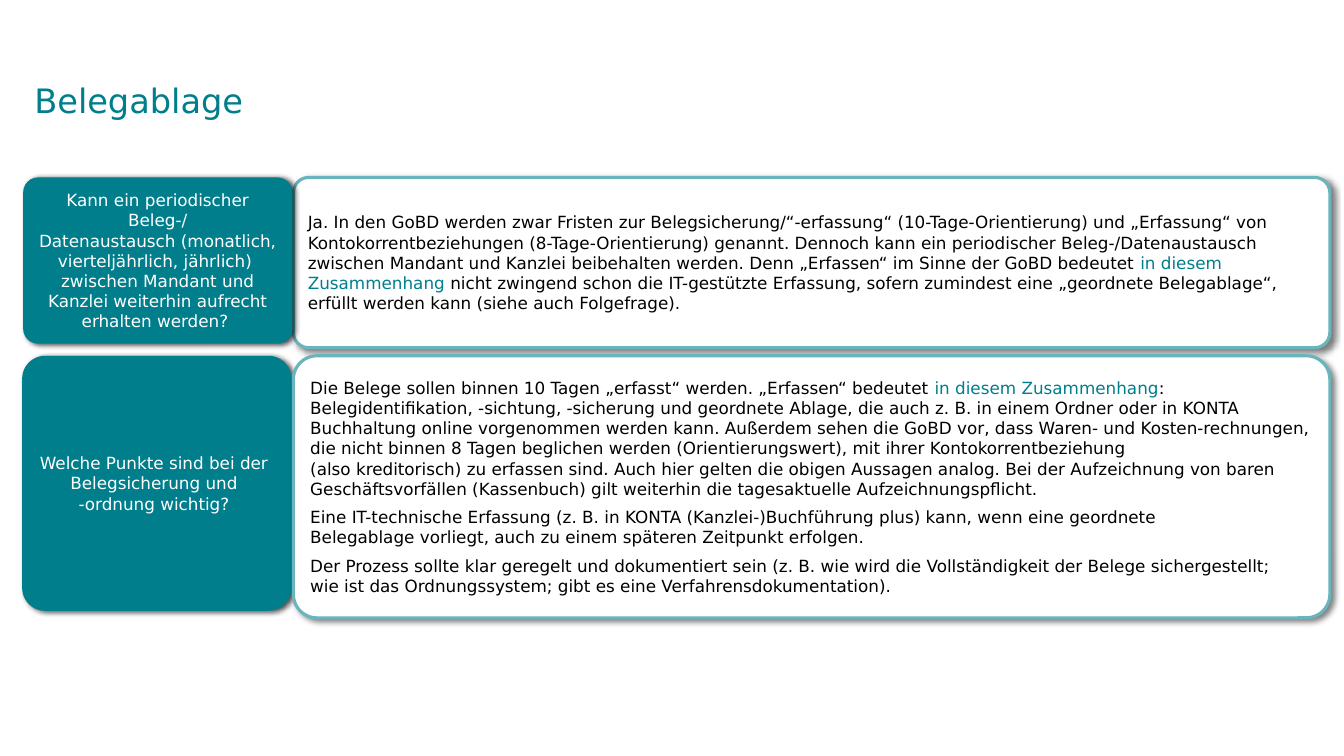
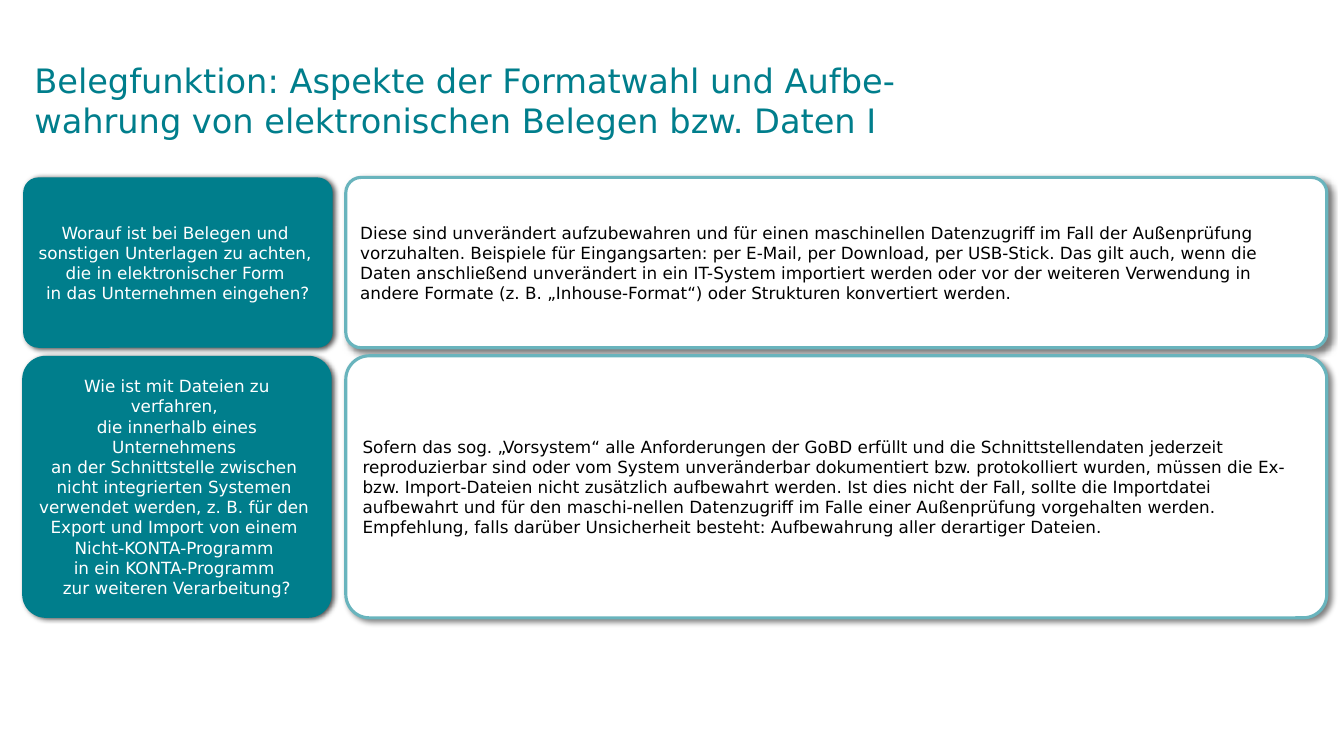
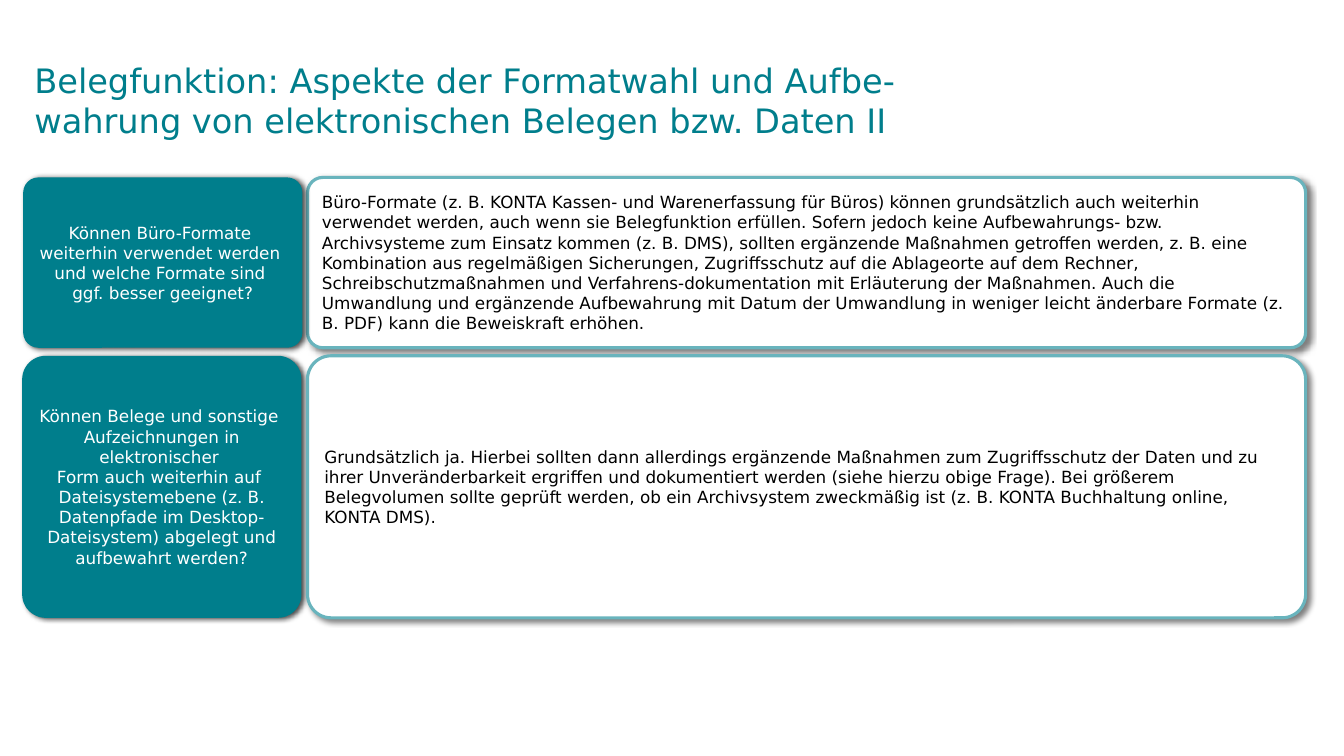
import copy

import pptx
import pptx.dml.color
import pptx.enum.shapes
import pptx.enum.text
import pptx.oxml
import pptx.oxml.ns
import pptx.util

FONT = "DejaVu Sans"
TEAL, PALE_TEAL, WHITE, BLACK = "007E8C", "69B4BD", "FFFFFF", "000000"
ALIGN = pptx.enum.text.PP_ALIGN
TITLE_BOX = (0.34, 0.49, 9.58, 1.01)

# Question left, top, height, and whether the answer lies behind the question
ROWS = [
    (0.23, 1.76, 1.69, True),
    (0.22, 3.53, 2.6, False),
]

# Look of each kind of card; shadow is opacity %, blur pt, distance pt, angle
QUESTION = {"fill": TEAL, "line": None, "color": WHITE, "shadow": (70, 4, 2, 20),
            "para": {"alignment": ALIGN.CENTER}}
ANSWER = {"fill": WHITE, "line": PALE_TEAL, "color": BLACK, "shadow": (50, 4, 3, 40),
          "para": {"alignment": ALIGN.LEFT, "space_before": pptx.util.Pt(6)}}

# Text between asterisks is highlighted; each list item is a paragraph
SLIDES = [
    {
        "title": "Belegablage",
        "question_width": 2.67, "answer_left": 2.91, "answer_width": 10.28,
        "question_trim": (0.04, 0.07),
        "cards": [
            (["Kann ein periodischer Beleg-/",
              "Datenaustausch (monatlich, vierteljährlich, jährlich) ",
              "zwischen Mandant und Kanzlei weiterhin aufrecht erhalten werden? "],
             ["Ja. In den GoBD werden zwar Fristen zur Belegsicherung/“-erfassung“ "
              "(10-Tage-Orientierung) und „Erfassung“ von Kontokorrentbeziehungen "
              "(8-Tage-Orientierung) genannt. Dennoch kann ein periodischer "
              "Beleg-/Datenaustausch zwischen Mandant und Kanzlei beibehalten werden. "
              "Denn „Erfassen“ im Sinne der GoBD bedeutet *in diesem Zusammenhang* nicht "
              "zwingend schon die IT-gestützte Erfassung, sofern zumindest eine "
              "„geordnete Belegablage“, erfüllt werden kann (siehe auch Folgefrage)."]),
            (["Welche Punkte sind bei der ",
              "Belegsicherung und \n-ordnung wichtig? "],
             ["Die Belege sollen binnen 10 Tagen „erfasst“ werden. „Erfassen“ bedeutet "
              "*in diesem Zusammenhang*: Belegidentifikation, -sichtung, -sicherung und "
              "geordnete Ablage, die auch z. B. in einem Ordner oder in KONTA "
              "Buchhaltung online vorgenommen werden kann. Außerdem sehen die GoBD vor, "
              "dass Waren- und Kosten-rechnungen, die nicht binnen 8 Tagen beglichen "
              "werden (Orientierungswert), mit ihrer Kontokorrentbeziehung \n"
              "(also kreditorisch) zu erfassen sind. Auch hier gelten die obigen "
              "Aussagen analog. Bei der Aufzeichnung von baren Geschäftsvorfällen "
              "(Kassenbuch) gilt weiterhin die tagesaktuelle Aufzeichnungspflicht.",
              "Eine IT-technische Erfassung (z. B. in KONTA (Kanzlei-)Buchführung plus) "
              "kann, wenn eine geordnete \nBelegablage vorliegt, auch zu einem späteren "
              "Zeitpunkt erfolgen.",
              "Der Prozess sollte klar geregelt und dokumentiert sein (z. B. wie wird "
              "die Vollständigkeit der Belege sichergestellt; \nwie ist das "
              "Ordnungssystem; gibt es eine Verfahrensdokumentation)."]),
        ],
    },
    {
        "title": "Belegfunktion: Aspekte der Formatwahl und Aufbe-wahrung von "
                 "elektronischen Belegen bzw. Daten I",
        "question_width": 3.07, "answer_left": 3.43, "answer_width": 9.73,
        "question_trim": (0, 0),
        "cards": [
            (["Worauf ist bei Belegen und ",
              "sonstigen Unterlagen zu achten, ",
              "die in elektronischer Form ",
              "in das Unternehmen eingehen?"],
             ["Diese sind unverändert aufzubewahren und für einen maschinellen "
              "Datenzugriff im Fall der Außenprüfung vorzuhalten. Beispiele für "
              "Eingangsarten: per E-Mail, per Download, per USB-Stick. Das gilt auch, "
              "wenn die Daten anschließend unverändert in ein IT-System importiert "
              "werden oder vor der weiteren Verwendung in andere Formate (z. B. "
              "„Inhouse-Format“) oder Strukturen konvertiert werden."]),
            (["Wie ist mit Dateien zu verfahren, ",
              "die innerhalb eines Unternehmens ",
              "an der Schnittstelle zwischen ",
              "nicht integrierten Systemen ",
              "verwendet werden, z. B. für den ",
              "Export und Import von einem ",
              "Nicht-KONTA-Programm ",
              "in ein KONTA-Programm ",
              "zur weiteren Verarbeitung?"],
             ["Sofern das sog. „Vorsystem“ alle Anforderungen der GoBD erfüllt und die "
              "Schnittstellendaten jederzeit reproduzierbar sind oder vom System "
              "unveränderbar dokumentiert bzw. protokolliert wurden, müssen die Ex- bzw. "
              "Import-Dateien nicht zusätzlich aufbewahrt werden. Ist dies nicht der "
              "Fall, sollte die Importdatei aufbewahrt und für den maschi-nellen "
              "Datenzugriff im Falle einer Außenprüfung vorgehalten werden. Empfehlung, "
              "falls darüber Unsicherheit besteht: Aufbewahrung aller derartiger "
              "Dateien."]),
        ],
    },
    {
        "title": "Belegfunktion: Aspekte der Formatwahl und Aufbe-wahrung von "
                 "elektronischen Belegen bzw. Daten II",
        "question_width": 2.77, "answer_left": 3.05, "answer_width": 9.9,
        "question_trim": (0, 0),
        "cards": [
            (["Können Büro-Formate ",
              "weiterhin verwendet werden ",
              "und welche Formate sind ",
              "ggf. besser geeignet?"],
             ["Büro-Formate (z. B. KONTA Kassen- und Warenerfassung für Büros) können "
              "grundsätzlich auch weiterhin verwendet werden, auch wenn sie "
              "Belegfunktion erfüllen. Sofern jedoch keine Aufbewahrungs- bzw. "
              "Archivsysteme zum Einsatz kommen (z. B. DMS), sollten ergänzende "
              "Maßnahmen getroffen werden, z. B. eine Kombination aus regelmäßigen "
              "Sicherungen, Zugriffsschutz auf die Ablageorte auf dem Rechner, "
              "Schreibschutzmaßnahmen und Verfahrens-dokumentation mit Erläuterung der "
              "Maßnahmen. Auch die Umwandlung und ergänzende Aufbewahrung mit Datum der "
              "Umwandlung in weniger leicht änderbare Formate (z. B. PDF) kann die "
              "Beweiskraft erhöhen."]),
            (["Können Belege und sonstige ",
              "Aufzeichnungen in elektronischer ",
              "Form auch weiterhin auf ",
              "Dateisystemebene (z. B. Datenpfade im Desktop-Dateisystem) abgelegt und "
              "aufbewahrt werden?"],
             ["Grundsätzlich ja. Hierbei sollten dann allerdings ergänzende Maßnahmen "
              "zum Zugriffsschutz der Daten und zu ihrer Unveränderbarkeit ergriffen "
              "und dokumentiert werden (siehe hierzu obige Frage). Bei größerem "
              "Belegvolumen sollte geprüft werden, ob ein Archivsystem zweckmäßig ist "
              "(z. B. KONTA Buchhaltung online, KONTA DMS)."]),
        ],
    },
]


def rgb(value):
    return pptx.dml.color.RGBColor.from_string(value)


def inches(box):
    return [pptx.util.Inches(v) for v in box]


def add_run(p, text, size, color):
    r = p.add_run()
    r.text = text
    for name, value in {"name": FONT, "size": pptx.util.Pt(size)}.items():
        setattr(r.font, name, value)
    r.font.color.rgb = rgb(color)
    return r


def add_text(p, text, size, color):
    """Write text with *highlights* and line breaks set in the size of the text."""
    for i, part in enumerate(text.split("*")):
        for j, line in enumerate(part.split("\n")):
            if j:
                p.add_line_break()
                p._p[-1].append(copy.deepcopy(r._r.rPr))
            r = add_run(p, line, size, TEAL if i % 2 else color)


def fill_frame(tf, paragraphs, size, color, para):
    tf.word_wrap = True
    tf.vertical_anchor = pptx.enum.text.MSO_ANCHOR.MIDDLE
    for i, text in enumerate(paragraphs):
        p = tf.add_paragraph() if i else tf.paragraphs[0]
        for name, value in para.items():
            setattr(p, name, value)
        add_text(p, text, size, color)


def add_shadow(sp, opacity, blur, distance, angle):
    sp.shadow.inherit = False
    effects = sp._element.spPr.find(pptx.oxml.ns.qn("a:effectLst"))
    effects.append(pptx.oxml.parse_xml(
        f'<a:outerShdw {pptx.oxml.ns.nsdecls("a")} blurRad="{pptx.util.Pt(blur)}" '
        f'dist="{pptx.util.Pt(distance)}" dir="{angle * 60000}" algn="tl" '
        f'rotWithShape="0"><a:srgbClr val="{BLACK}"><a:alpha val="{opacity * 1000}"/>'
        '</a:srgbClr></a:outerShdw>'))


def add_title(s, text):
    tf = s.shapes.add_textbox(*inches(TITLE_BOX)).text_frame
    margins = {"left": 0, "top": 0, "right": 0.13, "bottom": 0}
    for side, value in margins.items():
        setattr(tf, f"margin_{side}", pptx.util.Inches(value))
    fill_frame(tf, [text], 24, TEAL, {"alignment": ALIGN.LEFT})


def add_card(s, box, paragraphs, style):
    sp = s.shapes.add_shape(
        pptx.enum.shapes.MSO_SHAPE.ROUNDED_RECTANGLE, *inches(box))
    sp.adjustments[0] = 0.09
    sp.fill.solid()
    sp.fill.fore_color.rgb = rgb(style["fill"])
    if style["line"]:
        sp.line.color.rgb = rgb(style["line"])
        sp.line.width = pptx.util.Pt(2.25)
    else:
        sp.line.fill.background()
    add_shadow(sp, *style["shadow"])
    fill_frame(sp.text_frame, paragraphs, 12, style["color"], style["para"])


def add_question_slide(prs, content):
    s = prs.slides.add_slide(prs.slide_layouts[6])
    add_title(s, content["title"])
    rows = zip(ROWS, content["cards"], content["question_trim"])
    for (left, top, height, answer_behind), (question, answer), trim in rows:
        pair = [
            ((left, top, content["question_width"], height - trim), question, QUESTION),
            ((content["answer_left"], top, content["answer_width"], height),
             answer, ANSWER),
        ]
        for card in reversed(pair) if answer_behind else pair:
            add_card(s, *card)


def main():
    prs = pptx.Presentation()
    prs.slide_width, prs.slide_height = inches((13.33, 7.5))
    for content in SLIDES:
        add_question_slide(prs, content)
    prs.save("out.pptx")


if __name__ == "__main__":
    main()
